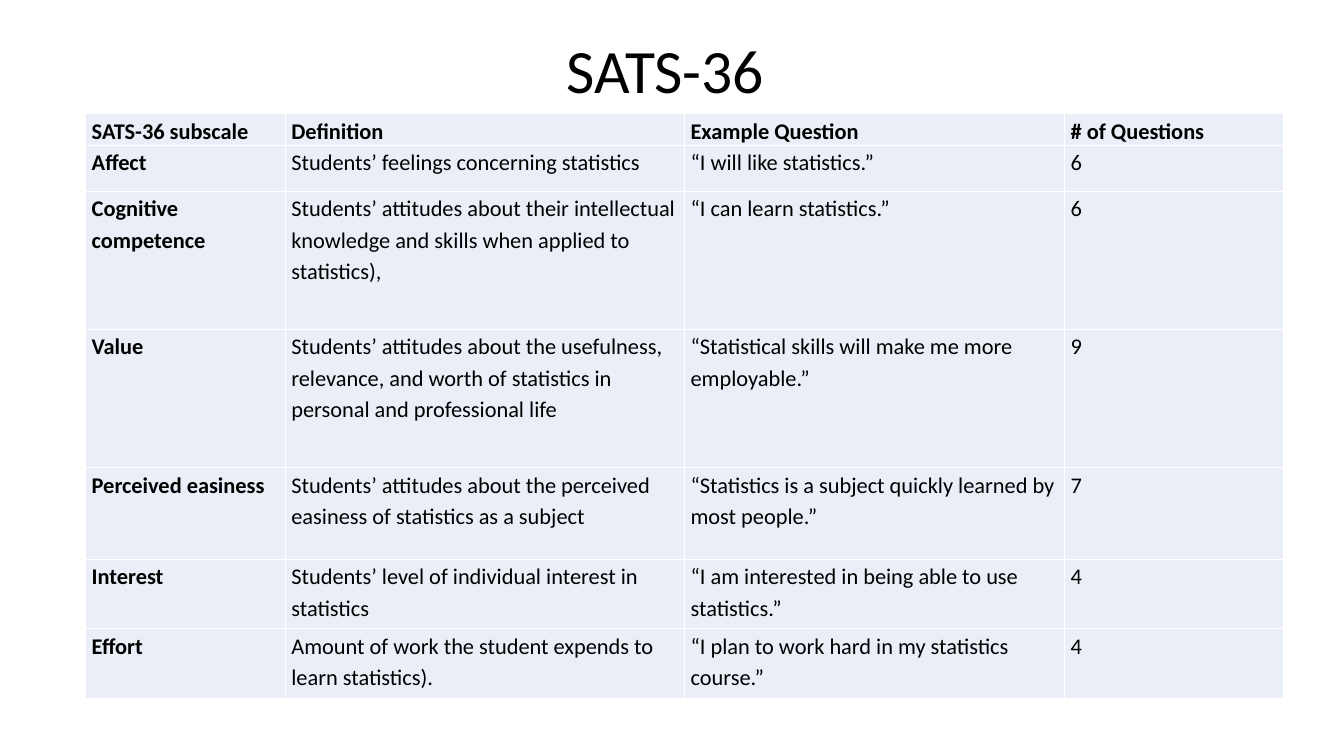
import pptx
import pptx.dml.color
import pptx.enum.text
import pptx.oxml
import pptx.oxml.ns
import pptx.util

PX = 9144  # 100 px to the inch
FONT = "Calibri"
COLUMN_WIDTHS = [198, 396, 377, 217]
ROW_HEIGHTS = [31, 46, 137, 137, 91, 69, 69]
SUBSCALES = [
    ("SATS-36 subscale", "Definition", "Example Question", "# of Questions"),
    ("Affect", "Students’ feelings concerning statistics",
     "“I will like statistics.”", "6"),
    ("Cognitive competence",
     "Students’ attitudes about their intellectual knowledge and skills when applied to statistics),",
     "“I can learn statistics.”", "6"),
    ("Value",
     "Students’ attitudes about the usefulness, relevance, and worth of statistics in personal and professional life",
     "“Statistical skills will make me more employable.”", "9"),
    ("Perceived easiness",
     "Students’ attitudes about the perceived easiness of statistics as a subject",
     "“Statistics is a subject quickly learned by most people.”", "7"),
    ("Interest", "Students’ level of individual interest in statistics",
     "“I am interested in being able to use statistics.”", "4"),
    ("Effort", "Amount of work the student expends to learn statistics).",
     "“I plan to work hard in my statistics course.”", "4"),
]


def px(length):
    return pptx.util.Emu(length * PX)


def color(hex_string):
    return pptx.dml.color.RGBColor.from_string(hex_string)


def style_paragraph(para, size, line_spacing, bold=False):
    para.line_spacing = line_spacing
    para.font.name = FONT
    para.font.size = pptx.util.Pt(size)
    para.font.bold = bold
    para.font.color.rgb = color("000000")


def add_title(page, text, left, top, width, height):
    box = page.shapes.add_textbox(px(left), px(top), px(width), px(height))
    frame = box.text_frame
    frame.word_wrap = True
    frame.vertical_anchor = pptx.enum.text.MSO_ANCHOR.MIDDLE
    frame.text = text
    para = frame.paragraphs[0]
    para.alignment = pptx.enum.text.PP_ALIGN.CENTER
    style_paragraph(para, 44, 0.9)


def set_borders(cell, hex_string, points):
    properties = cell._tc.get_or_add_tcPr()
    for index, side in enumerate("LRTB"):
        properties.insert(index, pptx.oxml.parse_xml(
            f'<a:ln{side} {pptx.oxml.ns.nsdecls("a")} w="{pptx.util.Pt(points)}">'
            f'<a:solidFill><a:srgbClr val="{hex_string}"/></a:solidFill></a:ln{side}>'))


def fill_cell(cell, text, bold):
    cell.margin_left = cell.margin_right = px(6)
    cell.margin_top = cell.margin_bottom = 0
    cell.fill.solid()
    cell.fill.fore_color.rgb = color("EAEFF7")
    set_borders(cell, "FFFFFF", 1)
    cell.text = text
    style_paragraph(cell.text_frame.paragraphs[0], 16, 1.15, bold)


def add_subscale_table(page, left, top):
    table = page.shapes.add_table(
        len(ROW_HEIGHTS), len(COLUMN_WIDTHS), px(left), px(top),
        px(sum(COLUMN_WIDTHS)), px(sum(ROW_HEIGHTS))).table
    table.horz_banding = table.first_row = False
    for column, width in zip(table.columns, COLUMN_WIDTHS):
        column.width = px(width)
    for row_index, (row, height) in enumerate(zip(table.rows, ROW_HEIGHTS)):
        row.height = px(height)
        for column_index, text in enumerate(SUBSCALES[row_index]):
            is_heading = row_index == 0 or column_index == 0
            fill_cell(row.cells[column_index], text, is_heading)


def main():
    deck = pptx.Presentation()
    deck.slide_width, deck.slide_height = px(1333), px(750)
    page = deck.slides.add_slide(deck.slide_layouts[6])
    add_title(page, "SATS-36", 85, 0, 1150, 145)
    add_subscale_table(page, 85, 113)
    deck.save("out.pptx")


if __name__ == "__main__":
    main()
